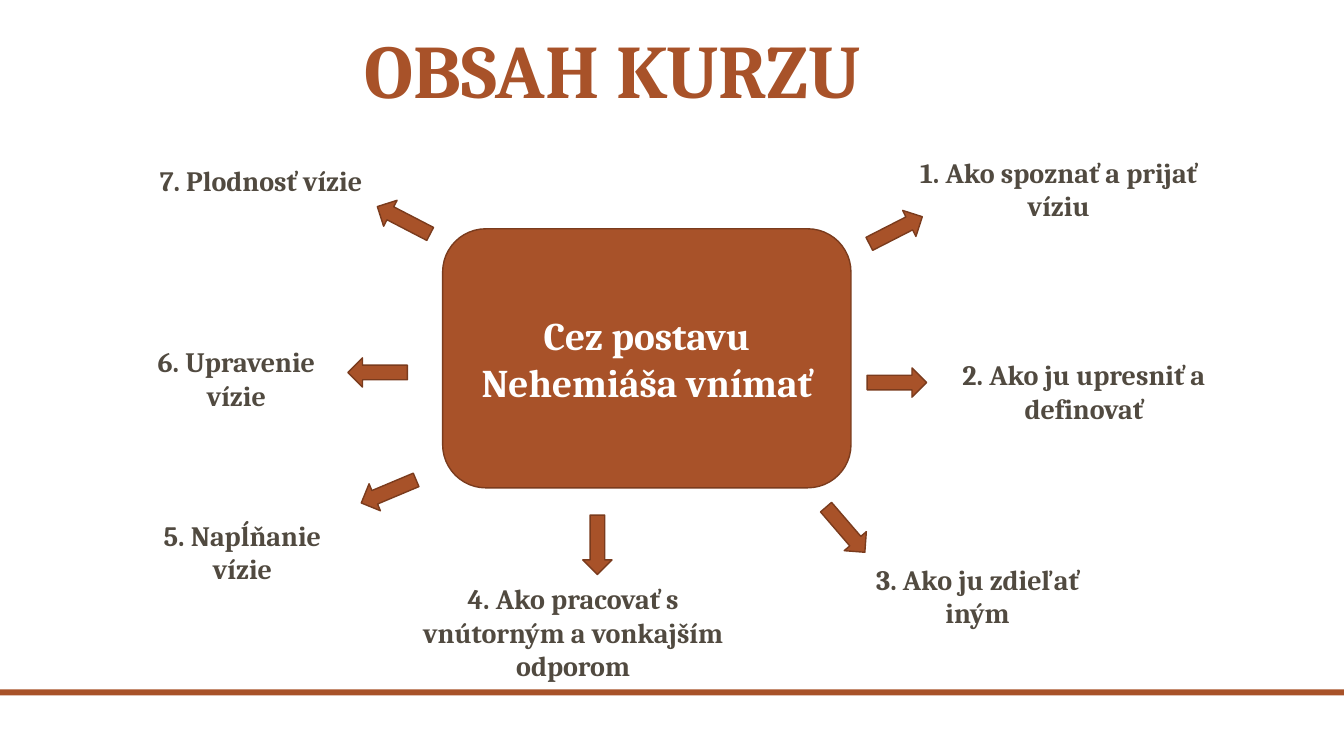
from pptx import Presentation
from pptx import util as u
from pptx.dml import color
from pptx.enum import shapes, text

RUST = "A85229"
DARK_RUST = "7A3B1D"
BROWN = "514A40"
WHITE = "FFFFFF"

TOPICS = [
    ("1. Ako spoznať a prijať víziu", (8.79, 1.49, 3.42, 0.77), (8.59, 2.14), 332.9),
    ("2. Ako ju upresniť a definovať", (9.04, 3.5, 3.42, 0.77), (8.6, 3.65), 0),
    ("3. Ako ju zdieľať iným", (8.39, 5.53, 2.61, 0.77), (8.09, 5.11), 49.3),
    ("4. Ako pracovať s vnútorným a vonkajším odporom", (3.96, 5.72, 3.45, 1.1), (5.63, 5.26), 90),
    ("5. Napĺňanie vízie", (1.32, 5.09, 2.17, 0.77), (3.56, 4.73), 157.2),
    ("6. Upravenie vízie", (1.16, 3.37, 2.37, 0.77), (3.45, 3.55), 180),
    ("7. Plodnosť vízie", (1.47, 1.57, 2.24, 0.43), (3.71, 2.04), 207.4),
]
ARROW_SIZE = (0.59, 0.29)


def rgb(value):
    return color.RGBColor.from_string(value)


def inches(box):
    return [u.Inches(length) for length in box]


def write(shape, content, size=20, colour=BROWN, anchor=text.MSO_ANCHOR.TOP, spacing=None):
    frame = shape.text_frame
    frame.word_wrap = True
    frame.vertical_anchor = anchor
    paragraph = frame.paragraphs[0]
    paragraph.alignment = text.PP_ALIGN.CENTER
    paragraph.line_spacing = spacing
    run = paragraph.add_run()
    run.text = content
    run.font.name = "Cambria"
    run.font.size = u.Pt(size)
    run.font.bold = True
    run.font.color.rgb = rgb(colour)


def add_filled(slide, kind, box, outline=DARK_RUST):
    shape = slide.shapes.add_shape(kind, *inches(box))
    shape.shadow.inherit = False
    shape.fill.solid()
    shape.fill.fore_color.rgb = rgb(RUST)
    if outline:
        shape.line.color.rgb = rgb(outline)
        shape.line.width = u.Pt(1)
    else:
        shape.line.fill.background()
    return shape


def add_footer_bar(slide, box):
    add_filled(slide, shapes.MSO_SHAPE.RECTANGLE, box, outline=None)


def add_title(slide, box):
    title = slide.shapes.add_textbox(*inches(box))
    write(title, "OBSAH KURZU ", size=54, colour=RUST, anchor=text.MSO_ANCHOR.BOTTOM, spacing=0.9)


def add_centre(slide, box):
    centre = add_filled(slide, shapes.MSO_SHAPE.ROUNDED_RECTANGLE, box)
    write(centre, "Cez postavu Nehemiáša vnímať", size=28, colour=WHITE, anchor=text.MSO_ANCHOR.MIDDLE)


def add_topic(slide, label, box):
    topic = slide.shapes.add_textbox(*inches(box))
    write(topic, label)
    topic.text_frame.auto_size = text.MSO_AUTO_SIZE.SHAPE_TO_FIT_TEXT


def add_arrow(slide, position, angle):
    arrow = add_filled(slide, shapes.MSO_SHAPE.RIGHT_ARROW, position + ARROW_SIZE)
    arrow.rotation = angle


def main():
    presentation = Presentation()
    presentation.slide_width = u.Inches(13.33)
    presentation.slide_height = u.Inches(7.5)
    slide = presentation.slides.add_slide(presentation.slide_layouts[6])
    add_footer_bar(slide, (0, 6.84, 13.33, 0.06))
    add_title(slide, (0.91, -0.06, 10.5, 1.25))
    add_centre(slide, (4.39, 2.27, 4.05, 2.57))
    for label, box, position, angle in TOPICS:
        add_topic(slide, label, box)
        add_arrow(slide, position, angle)
    presentation.save("out.pptx")


if __name__ == "__main__":
    main()
